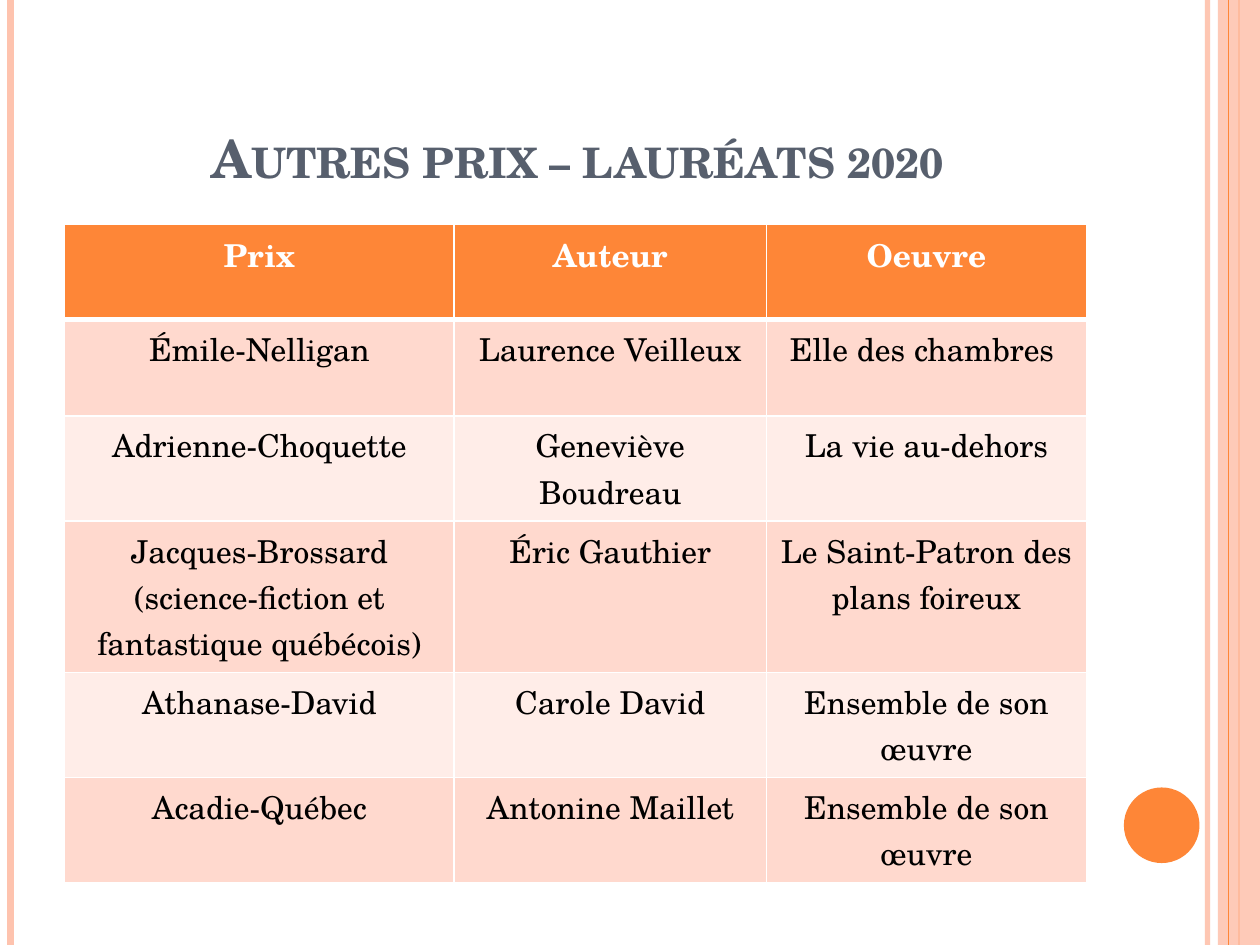
import pptx
import pptx.util
import pptx.dml.color
import pptx.enum.shapes
import pptx.enum.text
import pptx.oxml
import pptx.oxml.ns
import lxml.etree

Pt = pptx.util.Pt
FONT = "TeX Gyre Schola"
COLORS = {
    "orange": "FE8637",
    "peach": "FEC3AE",
    "slate": "575F6D",
    "dark band": "FFD9CE",
    "light band": "FFEDE8",
    "white": "FFFFFF",
    "black": "000000",
}
AWARDS = [
    ("Prix", "Auteur", "Oeuvre"),
    ("Émile-Nelligan", "Laurence Veilleux", "Elle des chambres "),
    ("Adrienne-Choquette", "Geneviève Boudreau", "La vie au-dehors"),
    ("Jacques-Brossard\n(science-fiction et fantastique québécois)",
     "Éric Gauthier", "Le Saint-Patron des plans foireux"),
    ("Athanase-David", "Carole David", "Ensemble de son œuvre"),
    ("Acadie-Québec", "Antonine Maillet", "Ensemble de son œuvre"),
]


def rgb(name):
    return pptx.dml.color.RGBColor.from_string(COLORS[name])


def add_child(parent, tag, **attributes):
    child = lxml.etree.SubElement(parent, pptx.oxml.ns.qn(tag))
    for key, value in attributes.items():
        child.set(key, str(value))
    return child


def set_opacity(shape, percent):
    for color in shape._element.spPr.iter(pptx.oxml.ns.qn("a:srgbClr")):
        add_child(color, "a:alpha", val=percent * 1000)


def format_paragraph(paragraph, size, color, bold):
    paragraph.alignment = pptx.enum.text.PP_ALIGN.CENTER
    paragraph.font.name = FONT
    paragraph.font.size = Pt(size)
    paragraph.font.bold = bold
    paragraph.font.color.rgb = rgb(color)


def add_rule(slide, x, top, height, color, width):
    line = slide.shapes.add_connector(
        pptx.enum.shapes.MSO_CONNECTOR.STRAIGHT,
        Pt(x), Pt(top), Pt(x), Pt(top + height))
    line.line.color.rgb = rgb(color)
    line.line.width = Pt(width)
    add_child(line._element.spPr, "a:effectLst")
    return line


def add_plain_shape(slide, kind, left, top, width, height, color):
    shape = slide.shapes.add_shape(kind, Pt(left), Pt(top), Pt(width), Pt(height))
    shape.shadow.inherit = False
    shape.fill.solid()
    shape.fill.fore_color.rgb = rgb(color)
    shape.line.fill.background()
    return shape


def add_side_decoration(slide, left, top, width, height):
    kinds = pptx.enum.shapes.MSO_SHAPE
    right = left + width
    inner_rule = add_rule(slide, right - 30, top, height, "peach", 3)
    set_opacity(inner_rule, 93)
    add_rule(slide, left + 6, top, height, "peach", 4.5)
    add_rule(slide, right - 12, top, height, "orange", 1.5)
    band = add_plain_shape(slide, kinds.RECTANGLE, right - 24, top, 24, height, "peach")
    set_opacity(band, 87)
    add_rule(slide, right - 18, top, height, "orange", 0.75)
    add_plain_shape(slide, kinds.OVAL, right - 77.75, top + 450, 43.2, 43.2, "orange")


def place_title(slide, text, left, top, width, height):
    title = slide.shapes.title
    title.left, title.top = Pt(left), Pt(top)
    title.width, title.height = Pt(width), Pt(height)
    frame = title.text_frame
    frame.text = text
    frame.vertical_anchor = pptx.enum.text.MSO_ANCHOR.BOTTOM
    paragraph = frame.paragraphs[0]
    format_paragraph(paragraph, 30, "slate", True)
    paragraph.runs[0]._r.get_or_add_rPr().set("cap", "small")


def set_borders(cell, widths):
    properties = cell._tc.get_or_add_tcPr()
    for position, (side, width) in enumerate(widths.items()):
        border = pptx.oxml.parse_xml(
            f'<a:{side} {pptx.oxml.ns.nsdecls("a")} w="{Pt(width)}"><a:solidFill>'
            f'<a:srgbClr val="{COLORS["white"]}"/></a:solidFill></a:{side}>')
        properties.insert(position, border)


def add_awards_table(slide, rows, left, top, column_widths, row_heights):
    table = slide.shapes.add_table(
        len(rows), len(column_widths), Pt(left), Pt(top),
        Pt(sum(column_widths)), Pt(sum(row_heights))).table
    for column, width in zip(table.columns, column_widths):
        column.width = Pt(width)
    for row, height in zip(table.rows, row_heights):
        row.height = Pt(height)

    for row_index, texts in enumerate(rows):
        header = row_index == 0
        band = "dark band" if row_index % 2 else "light band"
        for column_index, text in enumerate(texts):
            cell = table.cell(row_index, column_index)
            cell.text = text
            cell.fill.solid()
            cell.fill.fore_color.rgb = rgb("orange" if header else band)
            for paragraph in cell.text_frame.paragraphs:
                format_paragraph(paragraph, 18, "white" if header else "black", header)
            set_borders(cell, {"lnL": 1, "lnR": 1,
                               "lnT": 3 if row_index == 1 else 1,
                               "lnB": 3 if header else 1})


def main():
    presentation = pptx.Presentation()
    presentation.slide_width, presentation.slide_height = Pt(720), Pt(540)
    slide = presentation.slides.add_slide(presentation.slide_layouts[5])

    # Rules, band and disc at the slide edges
    add_side_decoration(slide, 0, 0, 720, 540)
    # Title
    place_title(slide, "Autres prix – lauréats 2020", 36, 21.6, 588, 90)
    # Table of awards
    add_awards_table(slide, AWARDS, 37, 128.4, [222.5, 178.5, 182.8],
                     [54] + [55.3] * 5)
    presentation.save("out.pptx")


if __name__ == "__main__":
    main()
